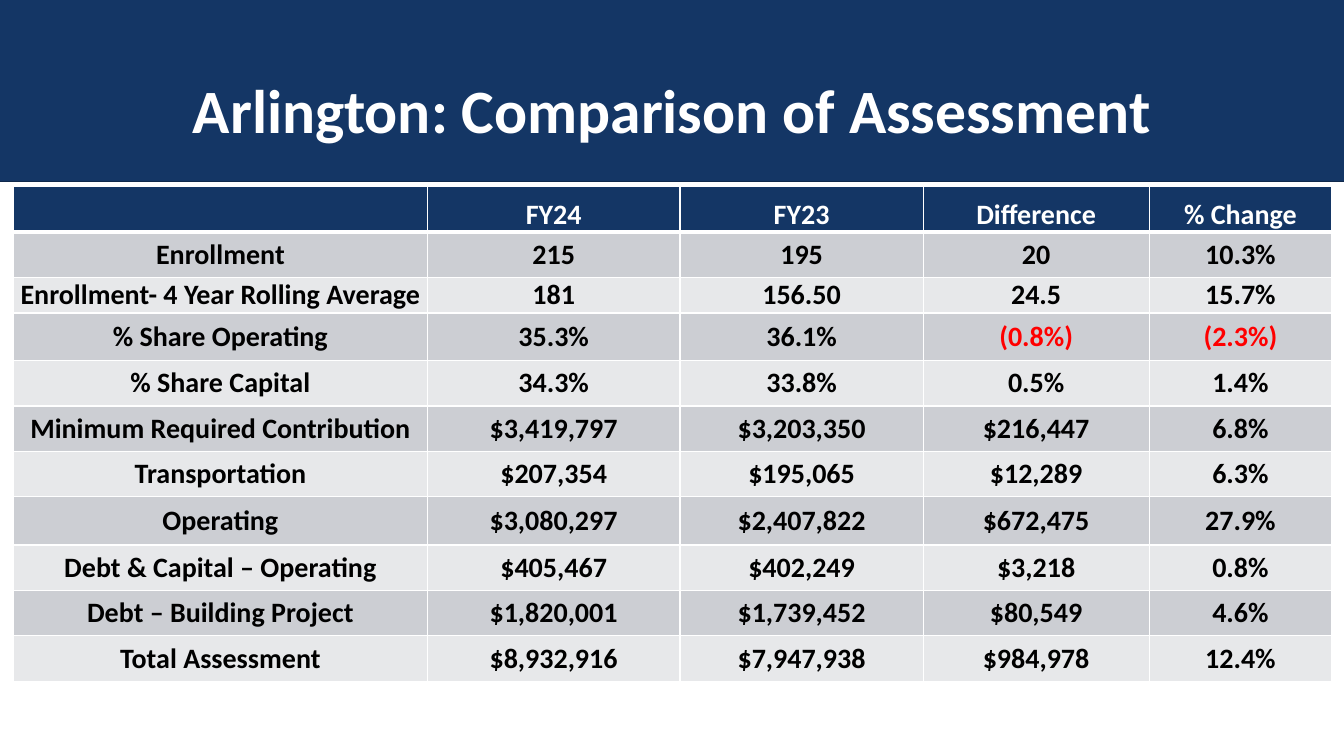
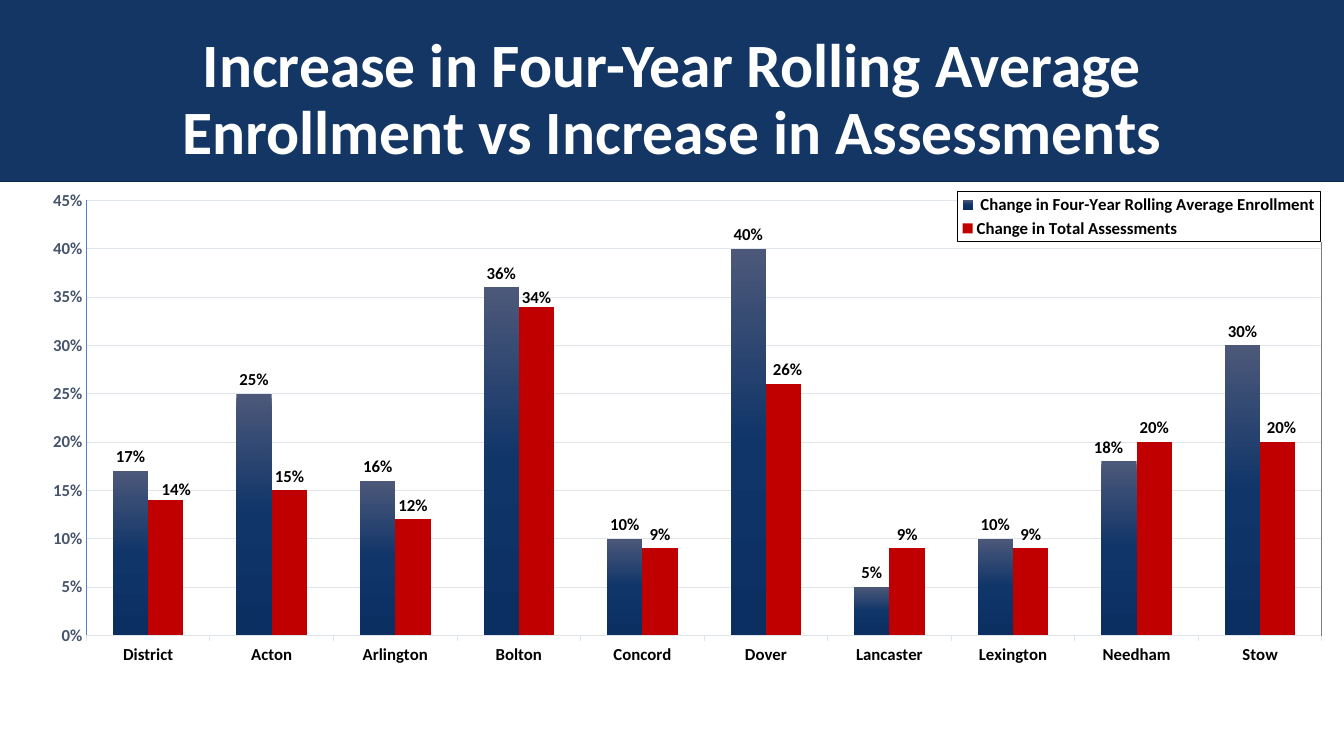
from pptx import Presentation
from pptx.chart.data import CategoryChartData
from pptx.dml.color import RGBColor
from pptx.enum.chart import XL_CHART_TYPE as Kind, XL_LABEL_POSITION as Spot
from pptx.enum.chart import XL_LEGEND_POSITION as Side, XL_TICK_MARK as Tick
from pptx.enum.shapes import MSO_CONNECTOR as Link, MSO_SHAPE as Shape
from pptx.enum.text import MSO_ANCHOR as Anchor, PP_ALIGN as Align
from pptx.oxml import parse_xml
from pptx.oxml.ns import nsdecls
from pptx.util import Inches, Pt

NAVY = RGBColor(0x14, 0x36, 0x65)
EDGE = RGBColor(0x0F, 0x28, 0x4B)
WHITE = RGBColor(0xFF, 0xFF, 0xFF)
BLACK = RGBColor(0, 0, 0)
RED = RGBColor(0xFF, 0, 0)
BRICK = RGBColor(0xC0, 0, 0)
SLATE = RGBColor(0x44, 0x54, 0x6A)
STEEL = RGBColor(0x4F, 0x81, 0xBD)
GRAY = RGBColor(0x7F, 0x7F, 0x7F)
PALE = RGBColor(0xE0, 0xE5, 0xEB)
BANDS = RGBColor(0xE7, 0xE8, 0xEA), RGBColor(0xCC, 0xCE, 0xD3)
FACE = "Calibri"

deck = Presentation()
deck.slide_width, deck.slide_height = Inches(13.33), Inches(7.5)
WIDE, HIGH = deck.slide_width, deck.slide_height


def area(x, y, w, h):
    """Turn shares of the slide into left, top, width and height."""
    return int(x * WIDE), int(y * HIGH), int(w * WIDE), int(h * HIGH)


def style(font, size, color):
    font.name, font.size, font.bold = FACE, Pt(size), True
    font.color.rgb = color


# Band and title on both slides
pages = []
for title, top in (
    ("Arlington: Comparison of Assessment", 0.053),
    ("Increase in Four-Year Rolling Average "
     "Enrollment vs Increase in Assessments", 0.037),
):
    page = deck.slides.add_slide(deck.slide_layouts[6])
    band = page.shapes.add_shape(Shape.RECTANGLE, *area(-0.01, -0.016, 1.02, 0.256))
    band.shadow.inherit = False
    band.fill.solid()
    band.fill.fore_color.rgb = NAVY
    band.line.color.rgb = EDGE
    band.line.width = Pt(1)

    frame = page.shapes.add_textbox(*area(0.069, top, 0.863, 0.193)).text_frame
    frame.word_wrap = True
    frame.vertical_anchor = Anchor.MIDDLE
    para = frame.paragraphs[0]
    para.text, para.alignment, para.line_spacing = title, Align.CENTER, 0.9
    style(para.font, 44, WHITE)
    pages.append(page)
first, second = pages

# Assessment table
ROWS = [
    ("", "FY24", "FY23", "Difference", "% Change"),
    ("Enrollment", "215", "195", "20", "10.3%"),
    ("Enrollment- 4 Year Rolling Average", "181", "156.50", "24.5", "15.7%"),
    ("% Share Operating", "35.3%", "36.1%", "(0.8%)", "(2.3%)"),
    ("% Share Capital", "34.3%", "33.8%", "0.5%", "1.4%"),
    ("Minimum Required Contribution", "$3,419,797", "$3,203,350", "$216,447", "6.8%"),
    ("Transportation", "$207,354", "$195,065", "$12,289", "6.3%"),
    ("Operating", "$3,080,297", "$2,407,822", "$672,475", "27.9%"),
    ("Debt & Capital – Operating", "$405,467", "$402,249", "$3,218", "0.8%"),
    ("Debt – Building Project", "$1,820,001", "$1,739,452", "$80,549", "4.6%"),
    ("Total Assessment", "$8,932,916", "$7,947,938", "$984,978", "12.4%"),
]
COLS = 0.308, 0.188, 0.181, 0.168, 0.136
TALL = {2: 0.047, 3: 0.063, 7: 0.064}
grid = first.shapes.add_table(
    len(ROWS), len(COLS), *area(0.01, 0.247, sum(COLS), 0.654)).table
grid.horz_banding = False
for col, share in zip(grid.columns, COLS):
    col.width = int(share * WIDE)
for r, row in enumerate(ROWS):
    grid.rows[r].height = int(TALL.get(r, 0.06) * HIGH)
    for c, text in enumerate(row):
        cell = grid.cell(r, c)
        cell.margin_left = cell.margin_right = 0
        cell.margin_top = cell.margin_bottom = 0
        cell.vertical_anchor = Anchor.MIDDLE if r else Anchor.BOTTOM
        for side in "LRTB":
            thick = 3 if (r, side) in ((0, "B"), (1, "T")) else 1
            cell._tc.get_or_add_tcPr().append(parse_xml(
                f'<a:ln{side} {nsdecls("a")} w="{Pt(thick)}"><a:solidFill>'
                f'<a:srgbClr val="{WHITE}"/></a:solidFill></a:ln{side}>'))
        cell.fill.solid()
        cell.fill.fore_color.rgb = BANDS[r % 2] if r else NAVY
        para = cell.text_frame.paragraphs[0]
        para.text, para.alignment = text, Align.CENTER
        ink = RED if text.startswith("(") else BLACK
        style(para.font, 20, ink if r else WHITE)

# Chart of enrollment and assessments
data = CategoryChartData(number_format="0%")
data.categories = ["District", "Acton", "Arlington", "Bolton", "Concord",
                   "Dover", "Lancaster", "Lexington", "Needham", "Stow"]
data.add_series(" Change in Four-Year Rolling Average Enrollment",
                (0.17, 0.25, 0.16, 0.36, 0.1, 0.4, 0.05, 0.1, 0.18, 0.3))
data.add_series("Change in Total Assessments",
                (0.14, 0.15, 0.12, 0.34, 0.09, 0.26, 0.09, 0.09, 0.2, 0.2))
chart = second.shapes.add_chart(
    Kind.COLUMN_CLUSTERED, *area(0.021, 0.252, 0.963, 0.628), data).chart
chart.has_title = False
chart.font.name, chart.font.size = FACE, Pt(10)

cats, vals = chart.category_axis, chart.value_axis
style(cats.tick_labels.font, 12, BLACK)
style(vals.tick_labels.font, 12, SLATE)
cats.major_tick_mark, vals.major_tick_mark = Tick.OUTSIDE, Tick.NONE
vals.minimum_scale, vals.maximum_scale, vals.major_unit = 0, 0.45, 0.05
vals.tick_labels.number_format = "0%"
vals.tick_labels.number_format_is_linked = False
for line, color in ((cats.format.line, PALE), (vals.format.line, STEEL),
                    (vals.major_gridlines.format.line, PALE)):
    line.color.rgb, line.width = color, Pt(0.75)

plot = chart.plots[0]
plot.gap_width, plot.overlap, plot.vary_by_categories = 150, 0, False
MOVES = (
    {8: (-0.008, 0)},
    {0: (0.008, 0.008), 3: (0, 0.01), 5: (0.003, 0), 9: (0.003, 0)},
)
for bars, moves in zip(plot.series, MOVES):
    bars.invert_if_negative = False
    tags = bars.data_labels
    tags.show_value, tags.position = True, Spot.OUTSIDE_END
    tags.number_format, tags.number_format_is_linked = "0%", False
    style(tags.font, 12, BLACK)
    for spot, (dx, dy) in moves.items():
        tag = bars.points[spot].data_label
        style(tag.font, 12, BLACK)
        tag.position = Spot.OUTSIDE_END
        node = tags._element.xpath(f'c:dLbl[c:idx/@val="{spot}"]')[0]
        node.insert(1, parse_xml(
            f'<c:layout {nsdecls("c")}><c:manualLayout><c:x val="{dx}"/>'
            f'<c:y val="{dy}"/></c:manualLayout></c:layout>'))

blue, red = plot.series
red.format.fill.solid()
red.format.fill.fore_color.rgb = BRICK
stops = "".join(
    f'<a:gs pos="{pos}"><a:srgbClr val="{color}"/></a:gs>'
    for pos, color in ((0, "4C5879"), (50000, "103569"), (100000, "0B2F61")))
blue._element.get_or_add_spPr().append(parse_xml(
    f'<a:gradFill {nsdecls("a")} rotWithShape="1"><a:gsLst>{stops}</a:gsLst>'
    '<a:lin ang="5400000" scaled="0"/></a:gradFill>'))

# Legend box and plot area, as shares of the chart
chart.has_legend = True
key = chart.legend
key.position, key.include_in_layout = Side.CORNER, True
style(key.font, 12, BLACK)
key._element.find("{*}overlay").addnext(parse_xml(
    f'<c:spPr {nsdecls("c", "a")}><a:solidFill><a:srgbClr val="{WHITE}"/></a:solidFill>'
    f'<a:ln w="{Pt(0.75)}"><a:solidFill><a:srgbClr val="{BLACK}"/></a:solidFill></a:ln>'
    '</c:spPr>'))
zone = chart._chartSpace.chart.plotArea
for old in zone.xpath("c:layout") + key._element.xpath("c:layout"):
    old.getparent().remove(old)
for host, index, inner, box in (
    (zone, 0, '<c:layoutTarget val="inner"/>', (0.045, 0.02, 0.955, 0.918)),
    (key._element, 1, "", (0.718, 0.001, 0.281, 0.106)),
):
    parts = "".join(f'<c:{n} val="{v}"/>' for n, v in zip("xywh", box))
    host.insert(index, parse_xml(
        f'<c:layout {nsdecls("c")}><c:manualLayout>{inner}<c:xMode val="edge"/>'
        f'<c:yMode val="edge"/>{parts}</c:manualLayout></c:layout>'))

# Right edge of the plot, below the legend
x, y, _, drop = area(0.983, 0.32, 0, 0.521)
rule = second.shapes.add_connector(Link.STRAIGHT, x, y, x, y + drop)
rule.line.color.rgb, rule.line.width = GRAY, Pt(0.75)
rule._element.spPr.append(parse_xml(f'<a:effectLst {nsdecls("a")}/>'))

deck.save("out.pptx")
